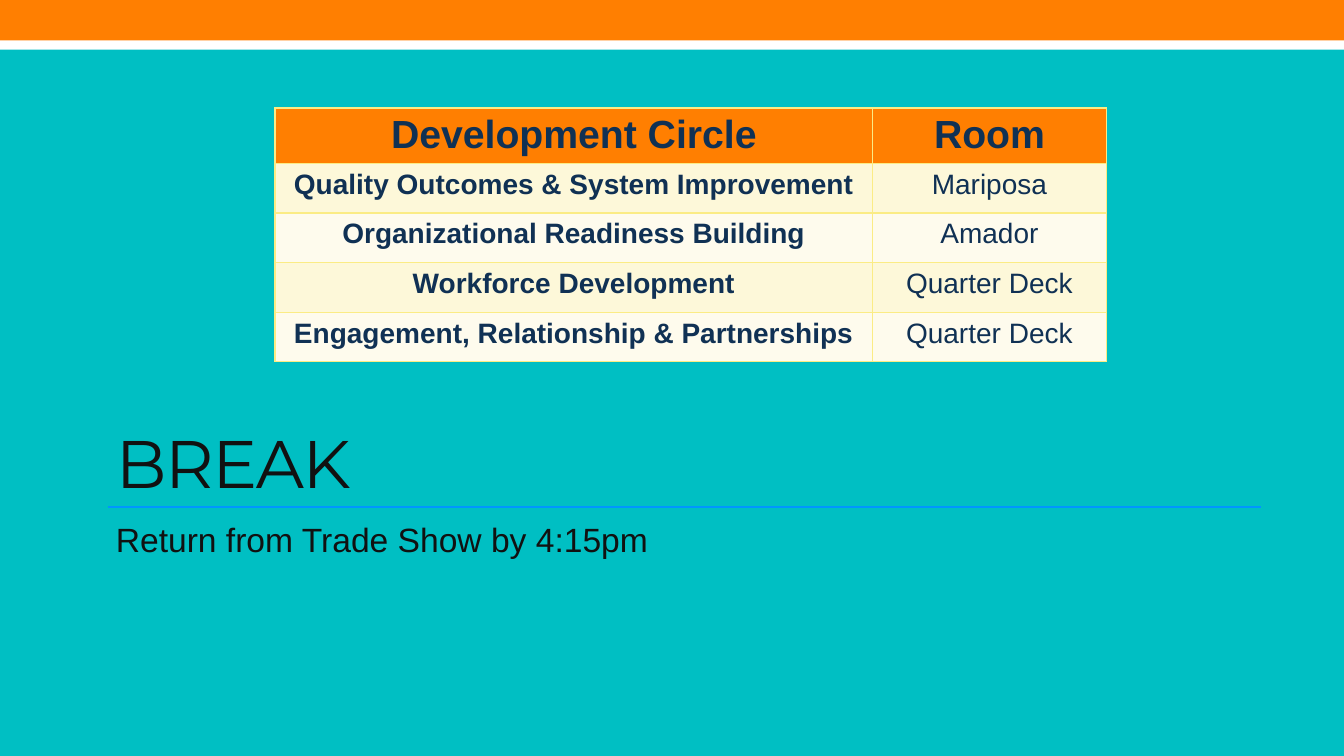
import pptx
import pptx.dml.color
import pptx.enum.shapes
import pptx.enum.text
import pptx.oxml
import pptx.oxml.ns
import pptx.util

Cm = pptx.util.Cm
Pt = pptx.util.Pt
RGBColor = pptx.dml.color.RGBColor
Anchor = pptx.enum.text.MSO_ANCHOR

TEAL = RGBColor(0x00, 0xBF, 0xC3)
ORANGE = RGBColor(0xFF, 0x7F, 0x01)
WHITE = RGBColor(0xFF, 0xFF, 0xFF)
BLUE = RGBColor(0x00, 0x96, 0xFF)
BLACK = RGBColor(0x11, 0x11, 0x11)
NAVY = RGBColor(0x10, 0x31, 0x54)
CREAM = RGBColor(0xFD, 0xF8, 0xD9)
IVORY = RGBColor(0xFE, 0xFB, 0xED)
GOLD = RGBColor(0xFB, 0xEC, 0x85)

WIDTH = 33.87
ROOMS = [
    ("Development Circle", "Room"),
    ("Quality Outcomes & System Improvement", "Mariposa"),
    ("Organizational Readiness Building", "Amador"),
    ("Workforce Development", "Quarter Deck"),
    ("Engagement, Relationship & Partnerships", "Quarter Deck"),
]


def style(font, name, size, color, bold=False):
    font.name = name
    font.size = Pt(size)
    font.color.rgb = color
    font.bold = bold


def add_band(slide, top, height, color):
    kind = pptx.enum.shapes.MSO_SHAPE.RECTANGLE
    band = slide.shapes.add_shape(kind, 0, Cm(top), Cm(WIDTH), Cm(height))
    band.shadow.inherit = False
    band.fill.solid()
    band.fill.fore_color.rgb = color
    band.line.fill.background()


def add_rule(slide, left, right, top):
    kind = pptx.enum.shapes.MSO_CONNECTOR.STRAIGHT
    rule = slide.shapes.add_connector(kind, Cm(left), Cm(top), Cm(right), Cm(top))
    rule.line.color.rgb = BLUE
    rule.line.width = Pt(1.5)
    props = rule._element.spPr
    props.append(pptx.oxml.parse_xml(
        f'<a:effectLst {pptx.oxml.ns.nsdecls("a")}/>'))


def add_text(slide, top, height, text, name, size, anchor):
    box = slide.shapes.add_textbox(Cm(2.67), Cm(top), Cm(28.78), Cm(height))
    frame = box.text_frame
    frame.word_wrap = True
    frame.vertical_anchor = anchor
    frame.margin_top = Cm(0.22)
    frame.margin_bottom = Cm(0.03)
    para = frame.paragraphs[0]
    para.text = text
    style(para.font, name, size, BLACK)
    return para


def add_edges(cell):
    props = cell._tc.get_or_add_tcPr()
    for index, side in enumerate(("lnL", "lnR", "lnT", "lnB")):
        props.insert(index, pptx.oxml.parse_xml(
            f'<a:{side} {pptx.oxml.ns.nsdecls("a")} w="{Pt(1)}"><a:solidFill>'
            f'<a:srgbClr val="{GOLD}"/></a:solidFill></a:{side}>'))


def fill_cell(cell, text, size, bold, color):
    cell.fill.solid()
    cell.fill.fore_color.rgb = color
    cell.margin_top = Cm(0.14)
    cell.margin_bottom = Cm(0.07)
    para = cell.text_frame.paragraphs[0]
    para.text = text
    para.alignment = pptx.enum.text.PP_ALIGN.CENTER
    style(para.font, "Arial", size, NAVY, bold)
    add_edges(cell)


def add_rooms(slide):
    widths = (15.06, 5.89)
    heights = [1.36] + [1.25] * (len(ROOMS) - 1)
    table = slide.shapes.add_table(
        len(ROOMS), len(widths), Cm(6.93), Cm(2.72),
        Cm(sum(widths)), Cm(sum(heights))).table
    for col, width in zip(table.columns, widths):
        col.width = Cm(width)
    for row, height in zip(table.rows, heights):
        row.height = Cm(height)
    for r, texts in enumerate(ROOMS):
        head = r == 0
        color = ORANGE if head else (IVORY, CREAM)[r % 2]
        for c, text in enumerate(texts):
            fill_cell(table.cell(r, c), text, 28 if head else 20,
                      head or c == 0, color)


def main():
    deck = pptx.Presentation()
    deck.slide_width = Cm(WIDTH)
    deck.slide_height = Cm(19.05)
    slide = deck.slides.add_slide(deck.slide_layouts[6])
    slide.background.fill.solid()
    slide.background.fill.fore_color.rgb = TEAL
    add_band(slide, 0.61, 0.64, WHITE)
    add_band(slide, 0, 1.02, ORANGE)
    add_rule(slide, 2.72, 31.78, 12.78)
    title = add_text(slide, 6.55, 6.12, "BREAK", "Montserrat", 48, Anchor.BOTTOM)
    title.runs[0].font._element.set("spc", "-100")
    add_text(slide, 12.85, 4.17, "Return from Trade Show by 4:15pm",
             "Arial", 24, Anchor.TOP)
    add_rooms(slide)
    deck.save("out.pptx")


if __name__ == "__main__":
    main()
